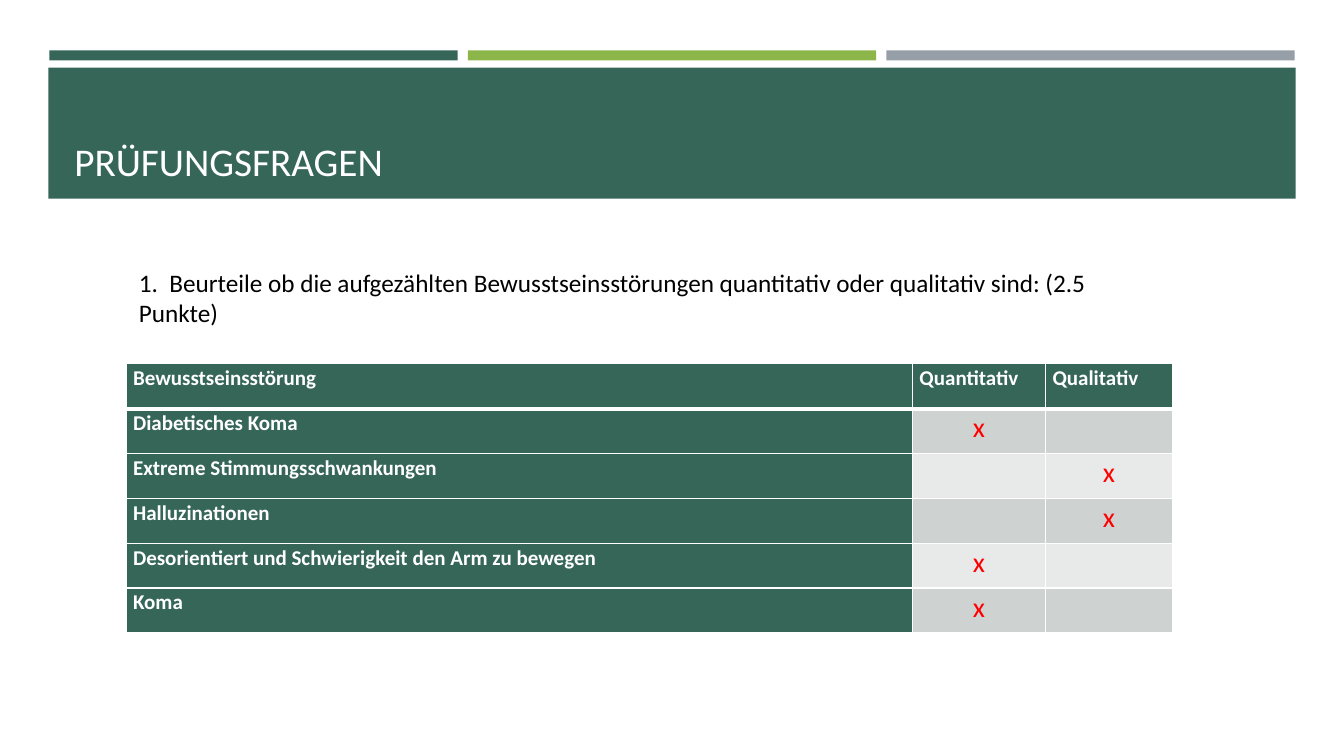
from lxml import etree
from pptx import Presentation
from pptx.dml.color import RGBColor
from pptx.enum.shapes import MSO_SHAPE
from pptx.enum.text import MSO_ANCHOR, PP_ALIGN
from pptx.oxml.ns import qn
from pptx.util import Inches, Pt

RECTANGLE = MSO_SHAPE.RECTANGLE
MIDDLE, BOTTOM = MSO_ANCHOR.MIDDLE, MSO_ANCHOR.BOTTOM
CENTER = PP_ALIGN.CENTER
FONT = "Calibri"
COLORS = {
    "green": "366658",
    "lime": "8CB64A",
    "gray": "969FA7",
    "dark_band": "CED3D1",
    "light_band": "E8EAEA",
    "white": "FFFFFF",
    "black": "000000",
    "red": "FF0000",
}
COLUMN_WIDTHS = (7.8, 1.32, 1.26)
ROW_HEIGHT = 0.445
ROWS = (
    ("Bewusstseinsstörung", "Quantitativ", "Qualitativ"),
    ("Diabetisches Koma", "x", ""),
    ("Extreme Stimmungsschwankungen", "", "x"),
    ("Halluzinationen", "", "x"),
    ("Desorientiert und Schwierigkeit den Arm zu bewegen", "x", ""),
    ("Koma", "x", ""),
)


def rgb(name):
    return RGBColor.from_string(COLORS[name])


def format_runs(paragraph, size, color, bold=False):
    for run in paragraph.runs:
        run.font.name = FONT
        run.font.size = Pt(size)
        run.font.bold = bold
        run.font.color.rgb = rgb(color)


def add_bar(slide, left, top, width, height, color):
    shape = slide.shapes.add_shape(
        RECTANGLE, Inches(left), Inches(top), Inches(width), Inches(height)
    )
    shape.shadow.inherit = False
    shape.fill.solid()
    shape.fill.fore_color.rgb = rgb(color)
    shape.line.fill.background()


def add_text(slide, left, top, width, height, text, size, color, anchor, indent=0):
    box = slide.shapes.add_textbox(
        Inches(left), Inches(top), Inches(width), Inches(height)
    )
    text_frame = box.text_frame
    text_frame.word_wrap = True
    text_frame.vertical_anchor = anchor
    text_frame.text = text
    paragraph = text_frame.paragraphs[0]
    paragraph._p.get_or_add_pPr().set("marL", str(Inches(indent)))
    format_runs(paragraph, size, color)


def add_borders(cell, bottom_width):
    properties = cell._tc.get_or_add_tcPr()
    for tag, width in (("lnL", 1), ("lnR", 1), ("lnT", 1), ("lnB", bottom_width)):
        line = etree.SubElement(properties, qn(f"a:{tag}"), w=str(Pt(width)))
        fill = etree.SubElement(line, qn("a:solidFill"))
        etree.SubElement(fill, qn("a:srgbClr"), val=COLORS["white"])


def fill_cell(cell, text, row, column):
    is_heading = row == 0 or column == 0
    band = "dark_band" if row % 2 else "light_band"
    add_borders(cell, 1 if row else 3)
    cell.fill.solid()
    cell.fill.fore_color.rgb = rgb("green" if is_heading else band)
    if not text:
        return
    cell.margin_left = cell.margin_right = Inches(0.07)
    cell.margin_top = cell.margin_bottom = 0
    cell.text_frame.text = text
    paragraph = cell.text_frame.paragraphs[0]
    paragraph.line_spacing = 1.07
    if is_heading:
        format_runs(paragraph, 15, "white", bold=True)
    else:
        paragraph.alignment = CENTER
        format_runs(paragraph, 20, "red")


def add_answer_table(slide, left, top):
    table = slide.shapes.add_table(
        len(ROWS), len(COLUMN_WIDTHS), Inches(left), Inches(top),
        Inches(sum(COLUMN_WIDTHS)), Inches(ROW_HEIGHT * len(ROWS)),
    ).table
    for column, width in zip(table.columns, COLUMN_WIDTHS):
        column.width = Inches(width)
    for row, texts in enumerate(ROWS):
        table.rows[row].height = Inches(ROW_HEIGHT)
        for column, text in enumerate(texts):
            fill_cell(table.cell(row, column), text, row, column)


def main():
    """Build the exam question slide and save it."""
    presentation = Presentation()
    presentation.slide_width = Inches(13.33)
    presentation.slide_height = Inches(7.5)
    slide = presentation.slides.add_slide(presentation.slide_layouts[6])
    for index, color in enumerate(("green", "lime", "gray")):
        add_bar(slide, 0.49 + 4.15 * index, 0.5, 4.05, 0.1, color)
    add_bar(slide, 0.48, 0.67, 12.37, 1.3, "green")
    add_text(slide, 0.64, 0.77, 12.06, 1.11, "PRÜFUNGSFRAGEN", 28, "white", BOTTOM)
    add_answer_table(slide, 1.25, 3.61)
    question = (
        "1.  Beurteile ob die aufgezählten Bewusstseinsstörungen "
        "quantitativ oder qualitativ sind: (2.5 Punkte)"
    )
    add_text(slide, 0.78, 2.75, 10.84, 0.4, question, 18, "black", MIDDLE, indent=0.5)
    presentation.save("out.pptx")


if __name__ == "__main__":
    main()
